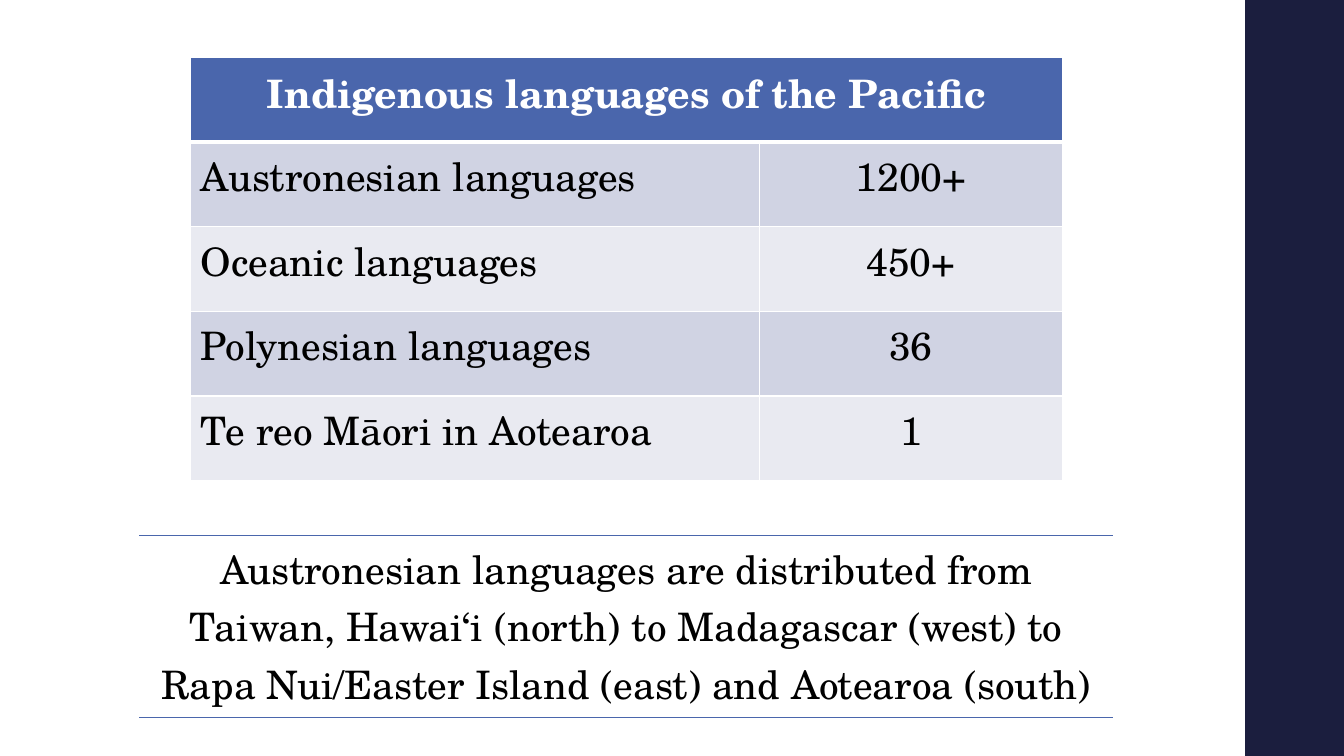
from dataclasses import dataclass

from lxml.etree import SubElement
from pptx import Presentation
from pptx.dml.color import RGBColor
from pptx.enum.shapes import MSO_SHAPE as Shape
from pptx.enum.text import PP_ALIGN as Align
from pptx.oxml.ns import qn
from pptx.util import Inches, Pt

WIDTH, HEIGHT = 13.33, 7.5
FONT, SIZE = "TeX Gyre Schola", 28
NAVY, BLUE, WHITE, BLACK = "1B1E3E", "4A66AC", "FFFFFF", "000000"
BANDS = ("D0D3E3", "E9EAF1")
SIDES = ("L", "R", "T", "B")


@dataclass(frozen=True)
class Border:
    """The colour and the width in points of a cell's edge."""

    color: str
    width: float = 1


@dataclass(frozen=True)
class Grid:
    """The place, column widths and row height of a table in inches."""

    left: float
    top: float
    columns: tuple[float, ...]
    row: float
    rows: int = 1


@dataclass(frozen=True)
class Look:
    """The text and paint of a cell."""

    text: str
    borders: dict[str, Border]
    fill: str | None = None
    color: str = BLACK
    bold: bool = False
    align: Align = Align.CENTER


LANGUAGES = (
    ("Austronesian languages", "1200+"),
    ("Oceanic languages", "450+"),
    ("Polynesian languages", "36"),
    ("Te reo Māori in Aotearoa", "1"),
)
COUNTS = Grid(1.89, 0.57, (5.64, 3.01), 0.84, len(LANGUAGES) + 1)
SPREAD = Grid(1.38, 5.31, (9.66,), 1.8)


def rgb(color: str) -> RGBColor:
    """Turn a hex string into a colour."""
    return RGBColor.from_string(color)


def add_grid(page, grid: Grid):
    """Add an unbanded table to the page."""
    frame = page.shapes.add_table(
        grid.rows, len(grid.columns), Inches(grid.left), Inches(grid.top),
        Inches(sum(grid.columns)), Inches(grid.row * grid.rows))
    table = frame.table
    table.first_row = table.horz_banding = False
    for column, width in zip(table.columns, grid.columns):
        column.width = Inches(width)
    return table


def set_borders(cell, borders: dict[str, Border]) -> None:
    """Draw the listed edges of a cell and clear the others."""
    properties = cell._tc.get_or_add_tcPr()
    for place, side in enumerate(SIDES):
        line = SubElement(properties, qn(f"a:ln{side}"))
        properties.insert(place, line)
        border = borders.get(side)
        if border is None:
            SubElement(line, qn("a:noFill"))
            continue
        line.set("w", str(Pt(border.width)))
        paint = SubElement(line, qn("a:solidFill"))
        SubElement(paint, qn("a:srgbClr")).set("val", border.color)


def dress(cell, look: Look) -> None:
    """Write and format one cell."""
    cell.text = look.text
    para = cell.text_frame.paragraphs[0]
    para.alignment = look.align
    font = para.font
    font.name, font.size, font.bold = FONT, Pt(SIZE), look.bold
    font.color.rgb = rgb(look.color)
    if look.fill:
        cell.fill.solid()
        cell.fill.fore_color.rgb = rgb(look.fill)
    else:
        cell.fill.background()
    set_borders(cell, look.borders)


def add_sidebar(page) -> None:
    """Add the dark band on the right."""
    left = 12.35
    band = page.shapes.add_shape(
        Shape.RECTANGLE, Inches(left), 0, Inches(WIDTH - left), Inches(HEIGHT))
    band.shadow.inherit = False
    band.fill.solid()
    band.fill.fore_color.rgb = rgb(NAVY)
    band.line.fill.background()


def add_counts(page) -> None:
    """Add the table of language counts."""
    table = add_grid(page, COUNTS)
    edges = {side: Border(WHITE) for side in SIDES}
    thick = Border(WHITE, 3)
    header, rest = table.cell(0, 0), table.cell(0, 1)
    header.merge(rest)
    title = "Indigenous languages of the Pacific"
    for cell, text in ((header, title), (rest, "")):
        dress(cell, Look(text, edges | {"B": thick}, BLUE, WHITE, True))
    for row, texts in enumerate(LANGUAGES, start=1):
        borders = edges | {"T": thick} if row == 1 else edges
        fill = BANDS[(row - 1) % len(BANDS)]
        for column, (text, align) in enumerate(zip(texts, (Align.LEFT, Align.CENTER))):
            dress(table.cell(row, column), Look(text, borders, fill, align=align))


def add_spread(page) -> None:
    """Add the ruled statement below the counts."""
    text = ("Austronesian languages are distributed from Taiwan, Hawai‘i (north) "
            "to Madagascar (west) to Rapa Nui/Easter Island (east) "
            "and Aotearoa (south)")
    rules = {side: Border(BLUE) for side in ("T", "B")}
    dress(add_grid(page, SPREAD).cell(0, 0), Look(text, rules))


def main() -> None:
    """Build and save the deck."""
    deck = Presentation()
    deck.slide_width, deck.slide_height = Inches(WIDTH), Inches(HEIGHT)
    page = deck.slides.add_slide(deck.slide_layouts[6])
    add_sidebar(page)
    add_counts(page)
    add_spread(page)
    deck.save("out.pptx")


if __name__ == "__main__":
    main()
